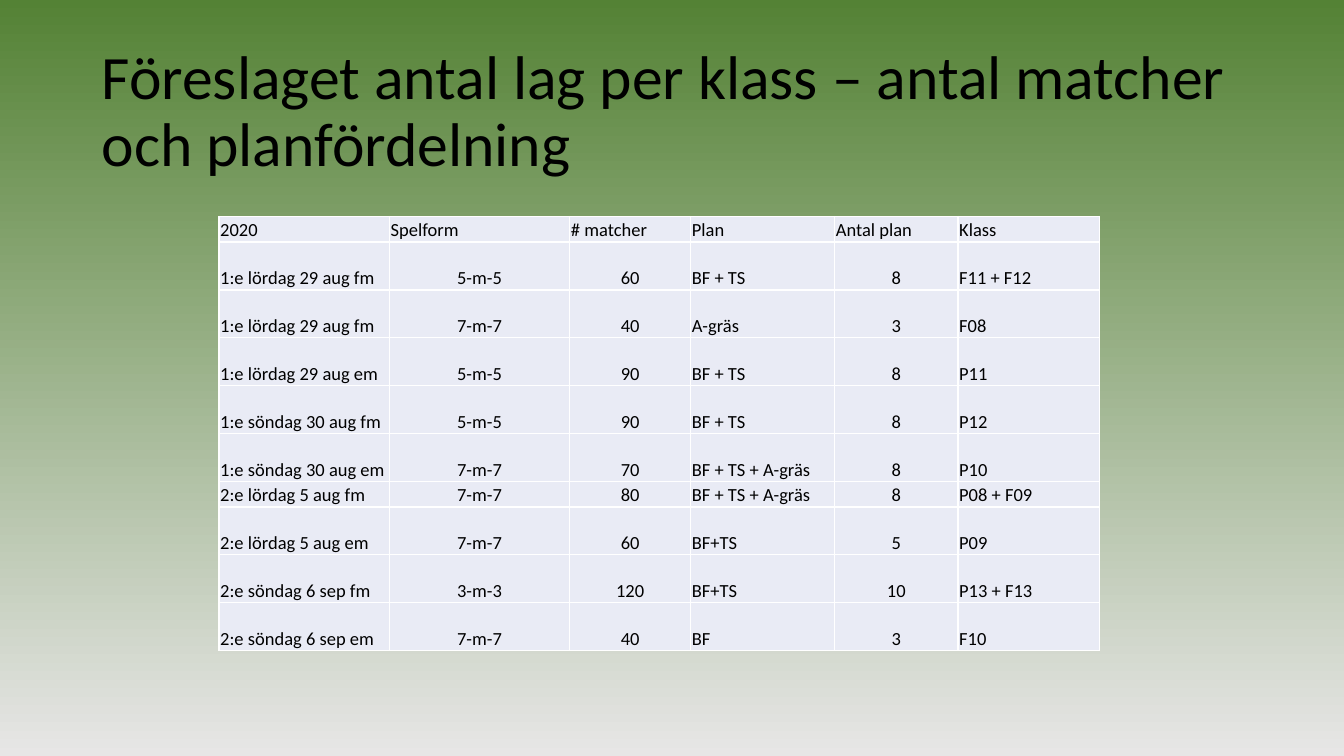
"""Build the slide with the match schedule and pitch allocation per class."""
from lxml.etree import SubElement
from pptx import Presentation
from pptx.dml.color import RGBColor
from pptx.enum.text import MSO_ANCHOR, PP_ALIGN
from pptx.oxml.ns import qn
from pptx.util import Inches, Pt

TITLE = "Föreslaget antal lag per klass – antal matcher och planfördelning"
HEADER = ("2020", "Spelform", "# matcher", "Plan", "Antal plan", "Klass")
MATCHES = [
    ("1:e lördag 29 aug fm", "5-m-5", "60", "BF + TS", "8", "F11 + F12"),
    ("1:e lördag 29 aug fm", "7-m-7", "40", "A-gräs", "3", "F08"),
    ("1:e lördag 29 aug em", "5-m-5", "90", "BF + TS", "8", "P11"),
    ("1:e söndag 30 aug fm", "5-m-5", "90", "BF + TS", "8", "P12"),
    ("1:e söndag 30 aug em", "7-m-7", "70", "BF + TS + A-gräs", "8", "P10"),
    ("2:e lördag 5 aug fm", "7-m-7", "80", "BF + TS + A-gräs", "8", "P08 + F09"),
    ("2:e lördag 5 aug em", "7-m-7", "60", "BF+TS", "5", "P09"),
    ("2:e söndag 6 sep fm", "3-m-3", "120", "BF+TS", "10", "P13 + F13"),
    ("2:e söndag 6 sep em", "7-m-7", "40", "BF", "3", "F10"),
]
CENTERED_COLS = {1, 2, 4}
COL_WIDTHS = (1.41, 1.49, 1, 1.19, 1.02, 1.17)
SHORT_ROWS = {0, 6}
SHORT_HEIGHT = 0.21
TABLE_BOX = (1.81, 1.79, 7.28, 3.59)
TITLE_BOX = (0.76, 0.33, 9.58, 1.21)
THEME = {
    "font": "Calibri", "title_size": 36.7, "cell_size": 11,
    "text": "000000", "cell": "E9EBF5", "border": "FFFFFF",
    "background": ("548235", "E7E6E6"),
}


def add_text(p, text, size):
    r = p.add_run()
    r.text = text
    r.font.name = THEME["font"]
    r.font.size = Pt(size)
    r.font.color.rgb = RGBColor.from_string(THEME["text"])


def set_background(s):
    fill = s.background.fill
    fill.gradient()
    fill.gradient_angle = 270
    for stop, color in zip(fill.gradient_stops, THEME["background"]):
        stop.color.rgb = RGBColor.from_string(color)


def add_title(s):
    tf = s.shapes.add_textbox(*map(Inches, TITLE_BOX)).text_frame
    tf.word_wrap = True
    tf.vertical_anchor = MSO_ANCHOR.MIDDLE
    tf.margin_left = tf.margin_right = Inches(0.08)
    p = tf.paragraphs[0]
    p.line_spacing = 0.9
    add_text(p, TITLE, THEME["title_size"])


def add_borders(cell):
    tc_pr = cell._tc.get_or_add_tcPr()
    for side in ("a:lnL", "a:lnR", "a:lnT", "a:lnB"):
        ln = SubElement(tc_pr, qn(side), w=str(Pt(1)))
        fill = SubElement(ln, qn("a:solidFill"))
        SubElement(fill, qn("a:srgbClr"), val=THEME["border"])


def fill_cell(cell, text, centered):
    cell.margin_left = cell.margin_top = cell.margin_right = Inches(0.01)
    cell.margin_bottom = 0
    cell.vertical_anchor = MSO_ANCHOR.BOTTOM
    add_borders(cell)
    cell.fill.solid()
    cell.fill.fore_color.rgb = RGBColor.from_string(THEME["cell"])
    p = cell.text_frame.paragraphs[0]
    p.alignment = PP_ALIGN.CENTER if centered else PP_ALIGN.LEFT
    add_text(p, text, THEME["cell_size"])


def add_schedule(s):
    rows = [HEADER, *MATCHES]
    table = s.shapes.add_table(len(rows), len(HEADER), *map(Inches, TABLE_BOX)).table
    tall_count = len(rows) - len(SHORT_ROWS)
    tall_height = (TABLE_BOX[3] - SHORT_HEIGHT * len(SHORT_ROWS)) / tall_count
    for col, width in zip(table.columns, COL_WIDTHS):
        col.width = Inches(width)
    for i, row in enumerate(rows):
        table.rows[i].height = Inches(SHORT_HEIGHT if i in SHORT_ROWS else tall_height)
        for j, text in enumerate(row):
            fill_cell(table.cell(i, j), text, i > 0 and j in CENTERED_COLS)


def main():
    prs = Presentation()
    prs.slide_width, prs.slide_height = Inches(11.11), Inches(6.25)
    s = prs.slides.add_slide(prs.slide_layouts[6])
    set_background(s)
    add_schedule(s)
    add_title(s)
    prs.save("out.pptx")


if __name__ == "__main__":
    main()
